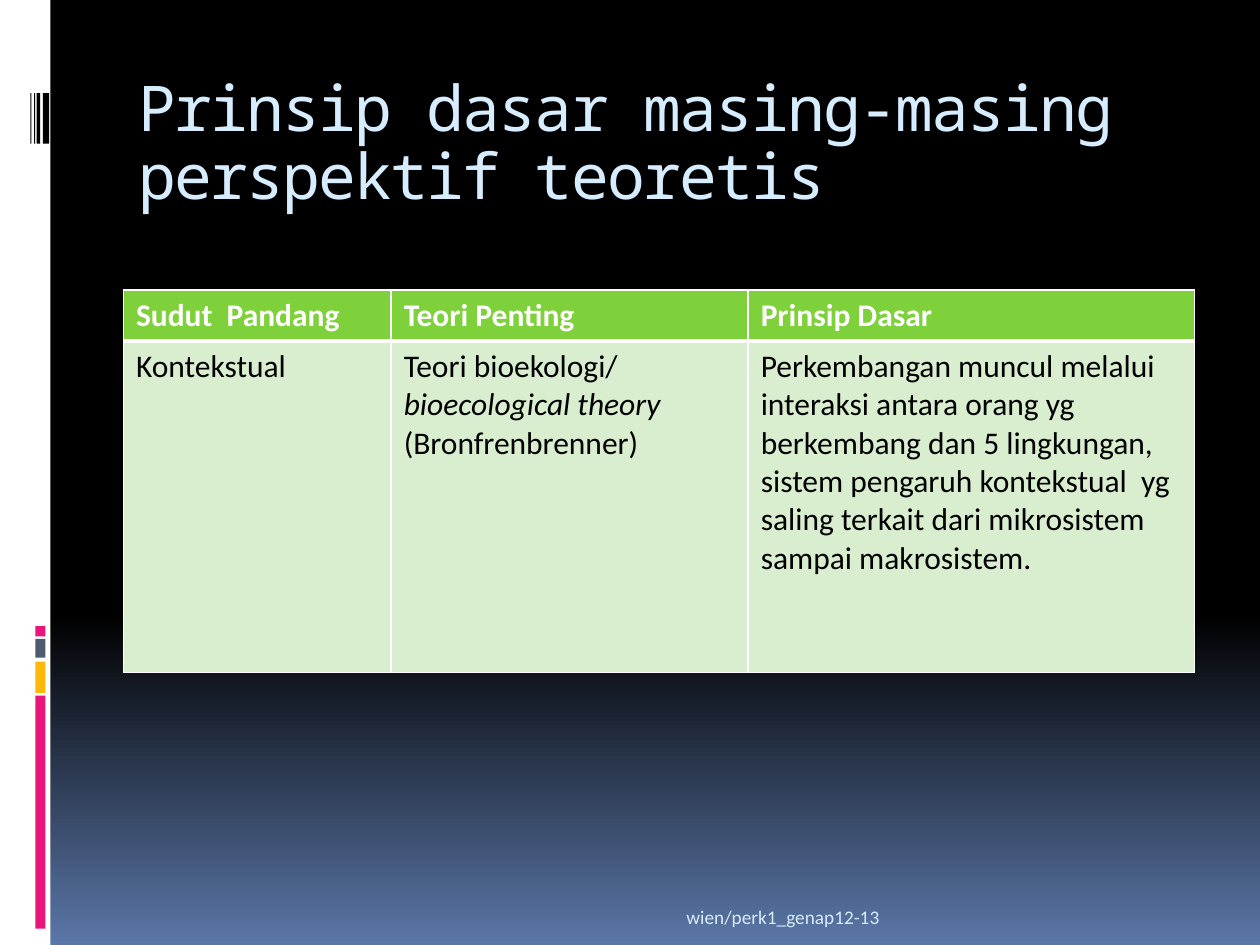
from dataclasses import dataclass

from lxml.etree import SubElement
from pptx import Presentation
from pptx.dml.color import RGBColor
from pptx.enum.shapes import MSO_SHAPE
from pptx.enum.text import MSO_ANCHOR as Anchor, MSO_AUTO_SIZE as AutoSize, PP_ALIGN as Align
from pptx.oxml import parse_xml
from pptx.oxml.ns import nsdecls, qn
from pptx.util import Inches, Pt


@dataclass(frozen=True)
class Theme:
    white: str = "FFFFFF"
    black: str = "000000"
    sky: str = "D6ECFF"
    horizon: str = "5B77A8"
    pink: str = "EA157A"
    amber: str = "FEB80A"
    slate: str = "4E5B6F"
    green: str = "7FD13B"
    pale_green: str = "D8EECE"
    title_font: str = "Noto Sans Mono"
    body_font: str = "Calibri"
    title_size: int = 36
    table_size: int = 18
    footer_size: int = 11
    thin: int = 1
    thick: int = 3


THEME = Theme()

HEADINGS = ["Sudut  Pandang", "Teori Penting", "Prinsip Dasar"]
# A cell is a list of paragraphs, a paragraph a list of (words, italic) runs.
CONTEXTUAL = [
    [[("Kontekstual", False)]],
    [[("Teori bioekologi/ ", False), ("bioecological theory", True)],
     [("(Bronfrenbrenner)", False)]],
    [[("Perkembangan muncul melalui interaksi antara orang yg berkembang dan "
       "5 lingkungan, sistem pengaruh kontekstual  yg saling terkait dari "
       "mikrosistem sampai makrosistem.", False)]],
]


def write(frame, paragraphs, *, size, color, font=THEME.body_font, bold=False,
          align=Align.LEFT, anchor=Anchor.TOP, line_spacing=None, tracking=None):
    frame.word_wrap = True
    frame.vertical_anchor = anchor
    for index, runs in enumerate(paragraphs):
        paragraph = frame.paragraphs[0] if index == 0 else frame.add_paragraph()
        paragraph.alignment = align
        paragraph.line_spacing = line_spacing
        for words, italic in runs:
            run = paragraph.add_run()
            run.text = words
            run.font.name, run.font.size = font, Pt(size)
            run.font.bold, run.font.italic = bold, italic
            run.font.color.rgb = RGBColor.from_string(color)
            if tracking is not None:
                run.font._element.set("spc", str(round(tracking * 100)))


def paint_background(slide):
    """Black sky that fades to blue below 65 % of the height."""
    fill = slide.background.fill
    fill.gradient()
    fill.gradient_angle = 270
    stops = fill._fill._gradFill.find(qn("a:gsLst"))
    for stop in list(stops):
        stops.remove(stop)
    for percent, color in ((0, THEME.black), (65, THEME.black), (100, THEME.horizon)):
        stops.append(parse_xml(
            f'<a:gs {nsdecls("a")} pos="{percent * 1000}"><a:srgbClr val="{color}"/></a:gs>'))


def add_bar(slide, left, top, width, height, color):
    bar = slide.shapes.add_shape(
        MSO_SHAPE.RECTANGLE, Inches(left), Inches(top), Inches(width), Inches(height))
    bar.shadow.inherit = False
    bar.fill.solid()
    bar.fill.fore_color.rgb = RGBColor.from_string(color)
    bar.line.fill.background()


def add_side_strip(slide, left, top, width, height):
    add_bar(slide, left, top, width, height, THEME.white)
    for offset, size, color in ((5.52, 1.85, THEME.pink), (5.25, 0.25, THEME.amber),
                                (5.07, 0.15, THEME.slate), (4.97, 0.08, THEME.pink)):
        add_bar(slide, left + 0.28, top + offset, 0.08, size, color)
    for offset, size in ((0.34, 0.05), (0.29, 0.03), (0.27, 0.01), (0.24, 0.01)):
        add_bar(slide, left + offset, top + 0.74, size, 0.4, THEME.black)


def add_title(slide, left, top, width, height):
    title = slide.shapes.title
    title.left, title.top = Inches(left), Inches(top)
    title.width, title.height = Inches(width), Inches(height)
    title.text_frame.auto_size = AutoSize.NONE
    write(title.text_frame, [[("Prinsip dasar masing-masing perspektif teoretis", False)]],
          size=THEME.title_size, color=THEME.sky, font=THEME.title_font,
          line_spacing=0.9, tracking=-1)


def set_borders(cell, **widths):
    properties = cell._tc.get_or_add_tcPr()
    for side in "LRTB":
        line = SubElement(properties, qn(f"a:ln{side}"),
                          w=str(Pt(widths.get(side, THEME.thin))))
        SubElement(SubElement(line, qn("a:solidFill")), qn("a:srgbClr"), val=THEME.white)


def fill_cell(cell, paragraphs, *, fill, color, bold=False, **borders):
    set_borders(cell, **borders)
    cell.fill.solid()
    cell.fill.fore_color.rgb = RGBColor.from_string(fill)
    write(cell.text_frame, paragraphs, size=THEME.table_size, color=color, bold=bold)


def add_theory_table(slide, left, top, width, height):
    table = slide.shapes.add_table(
        2, len(HEADINGS), Inches(left), Inches(top), Inches(width), Inches(height)).table
    for column, share in zip(table.columns, (3, 4, 5)):
        column.width = Inches(width * share / 12)
    heading_height = 0.37
    table.rows[0].height = Inches(heading_height)
    table.rows[1].height = Inches(height - heading_height)
    for index, (heading, content) in enumerate(zip(HEADINGS, CONTEXTUAL)):
        fill_cell(table.cell(0, index), [[(heading, False)]], fill=THEME.green,
                  color=THEME.white, bold=True, B=THEME.thick)
        fill_cell(table.cell(1, index), content, fill=THEME.pale_green,
                  color=THEME.black, T=THEME.thick)


def add_footer(slide, left, top, width, height):
    footer = slide.shapes.add_textbox(
        Inches(left), Inches(top), Inches(width), Inches(height))
    write(footer.text_frame, [[("wien/perk1_genap12-13", False)]], size=THEME.footer_size,
          color=THEME.sky, align=Align.RIGHT, anchor=Anchor.BOTTOM)


def main():
    deck = Presentation()
    deck.slide_width, deck.slide_height = Inches(10), Inches(7.5)
    slide = deck.slides.add_slide(deck.slide_layouts.get_by_name("Title Only"))
    paint_background(slide)
    add_side_strip(slide, 0, 0, 0.4, 7.5)
    add_title(slide, 1, 0.56, 8.5, 1)
    add_theory_table(slide, 0.98, 2.3, 8.5, 3)
    add_footer(slide, 1, 7.02, 6.08, 0.4)
    deck.save("out.pptx")


if __name__ == "__main__":
    main()
